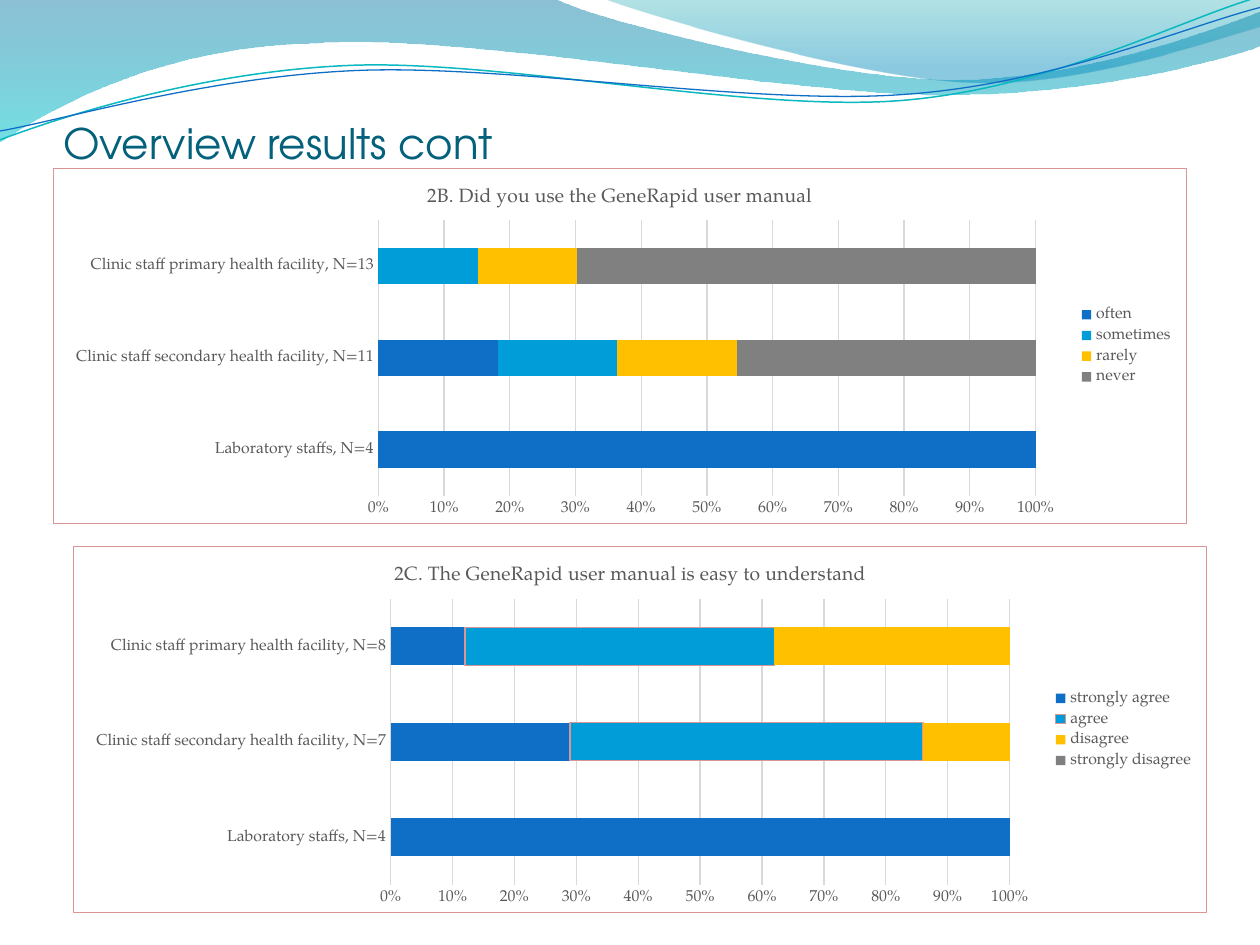
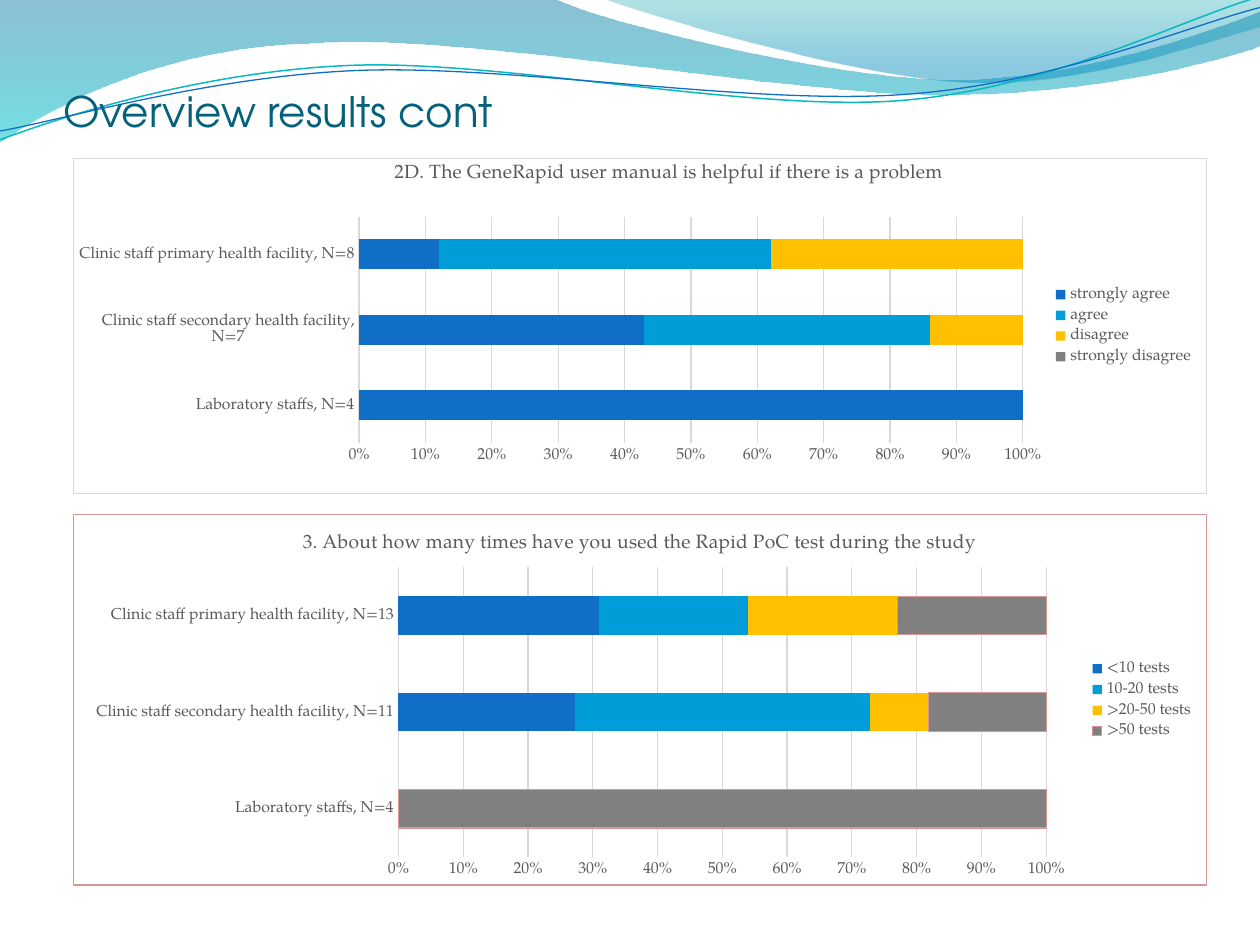
import math

import pptx
import pptx.chart.data
import pptx.dml.color
import pptx.enum.chart
import pptx.enum.text
import pptx.oxml
import pptx.oxml.ns
import pptx.util

Inches, Pt = pptx.util.Inches, pptx.util.Pt
qn = pptx.oxml.ns.qn
NS = pptx.oxml.ns.nsdecls("a", "c")

GREY, ROSE, INK = "D9D9D9", "D99694", "595959"
BARS = ["0F6FC6", "009DD9", "FFC000", "808080"]

# Each wave is a list of points (lines) and six-number Bezier curves, in inches.
BAND = [(0, 0), (4.4, -0.01), (4.76, 0.17, 6.64, 0.63, 7.58, 0.63),
        (8.53, 0.63, 9.58, 0.26, 10, 0.09), (10.01, 0.36),
        (9.83, 0.44, 8.7, 0.76, 7.46, 0.75), (6.22, 0.75, 3.82, 0.28, 2.57, 0.34),
        (1.29, 0.36, 0.46, 0.83, -0.01, 1.13)]
CREST = [(4.79, -0.01), (5.09, 0.11, 6.82, 0.62, 7.69, 0.65),
         (8.56, 0.69, 9.61, 0.32, 10, 0.21), (10, 0)]
TEAL = [(0, 1.11), (0.48, 0.93, 1.58, 0.57, 2.77, 0.52),
        (3.95, 0.47, 5.93, 0.89, 7.13, 0.8), (8.33, 0.71, 9.38, 0.15, 9.98, -0.02)]
BLUE = [(0, 1.04), (0.47, 0.96, 1.64, 0.61, 2.83, 0.56),
        (4.03, 0.51, 5.97, 0.84, 7.17, 0.75), (8.36, 0.67, 9.41, 0.21, 10, 0.06)]
TILT = 2.7

AGREE = ["strongly agree", "agree", "disagree", "strongly disagree"]
USE = ["often", "sometimes", "rarely", "never"]
TESTS = ["<10 tests", "10-20 tests", ">20-50 tests", ">50 tests"]


def rgb(code):
    return pptx.dml.color.RGBColor.from_string(code)


def spin(step, angle, cx=5, cy=0.58):
    """Turn every point of a step clockwise about (cx, cy)."""
    c, s = math.cos(math.radians(angle)), math.sin(math.radians(angle))
    turned = []
    for x, y in zip(step[::2], step[1::2]):
        turned += [cx + c * (x - cx) - s * (y - cy),
                   cy + s * (x - cx) + c * (y - cy)]
    return tuple(turned)


def bend(shape, steps):
    """Turn the straight segments of a freeform into the curves of its steps."""
    lines = list(shape.element.iter(qn("a:lnTo")))
    for line, step in zip(lines, steps[1:]):
        if len(step) == 6:
            points = "".join(
                f'<a:pt x="{Inches(x) - shape.left}" y="{Inches(y) - shape.top}"/>'
                for x, y in zip(step[::2], step[1::2]))
            line.getparent().replace(line, pptx.oxml.parse_xml(
                f"<a:cubicBezTo {NS}>{points}</a:cubicBezTo>"))


def staff(lab, second, first):
    return [f"Laboratory staffs, N={lab}",
            f"Clinic staff secondary health facility, N={second}",
            f"Clinic staff primary health facility, N={first}"]


def place(node, index, inner=False, **box):
    """Give a chart part a manual layout, in percent of the chart."""
    for old in node.findall(qn("c:layout")):
        node.remove(old)
    target = '<c:layoutTarget val="inner"/>' if inner else ""
    modes = "".join(f'<c:{k}Mode val="edge"/>' for k in box if k in "xy")
    sizes = "".join(f'<c:{k} val="{v / 100}"/>' for k, v in box.items())
    node.insert(index, pptx.oxml.parse_xml(
        f"<c:layout {NS}><c:manualLayout>{target}{modes}{sizes}"
        "</c:manualLayout></c:layout>"))


class Deck:
    head, body = "TeX Gyre Adventor", "TeX Gyre Pagella"

    def __init__(self):
        self.file = pptx.Presentation()
        self.file.slide_width, self.file.slide_height = Inches(10), Inches(7.5)
        self.slide = None

    def page(self, top, height):
        """Start a slide with its waves and its title."""
        self.slide = self.file.slides.add_slide(self.file.slide_layouts[6])
        self.area(BAND, [(0, "0074A1", 45), (100, "00C6CF", 55)])
        self.area(CREST, [(0, "00A1A9", 30), (80, "008BBF", 45)])
        self.curve(TEAL, "0AB8BF", 0.85)
        self.curve(BLUE, "0F6FC6", 0.75)
        self.title("Overview results cont", top, height)

    def wave(self, steps, close):
        ends = [(Inches(step[-2]), Inches(step[-1])) for step in steps]
        pen = self.slide.shapes.build_freeform(*ends[0])
        pen.add_line_segments(ends[1:], close=close)
        shape = pen.convert_to_shape()
        shape.shadow.inherit = False
        bend(shape, steps)
        return shape

    def area(self, steps, stops):
        """Draw a closed wave; stops give percent, colour and opacity."""
        shape = self.wave(steps, True)
        shape.line.fill.background()
        marks = "".join(
            f'<a:gs pos="{at * 1000}"><a:srgbClr val="{code}">'
            f'<a:alpha val="{alpha * 1000}"/></a:srgbClr></a:gs>'
            for at, code, alpha in stops)
        shape.element.spPr.find(qn("a:custGeom")).addnext(pptx.oxml.parse_xml(
            f"<a:gradFill {NS}><a:gsLst>{marks}</a:gsLst>"
            '<a:lin ang="5400000" scaled="0"/></a:gradFill>'))

    def curve(self, steps, color, width):
        """Draw an open wave as a level shape that is tilted back."""
        shape = self.wave([spin(step, TILT) for step in steps], False)
        shape.rotation = 360 - TILT
        shape.fill.background()
        self.rule(shape.line, color, width)

    def title(self, text, top, height):
        box = self.slide.shapes.add_textbox(
            Inches(0.5), Inches(top), Inches(9.08), Inches(height))
        frame = box.text_frame
        frame.word_wrap = True
        frame.vertical_anchor = pptx.enum.text.MSO_ANCHOR.BOTTOM
        frame.margin_left = frame.margin_right = frame.margin_bottom = 0
        frame.text = text
        self.style(frame.paragraphs[0].font, 24, "04617B", self.head)

    def style(self, font, size, color=INK, name=body):
        font.name, font.size, font.bold = name, Pt(size), False
        font.color.rgb = rgb(color)

    def chart(self, left, top, height, title, names, groups, rows,
              border=ROSE, edged=None):
        """Add a 100% bar chart; edged names the series with an outline."""
        data = pptx.chart.data.CategoryChartData()
        data.categories = groups
        for name, row in zip(names, rows):
            data.add_series(name, row)
        chart = self.slide.shapes.add_chart(
            pptx.enum.chart.XL_CHART_TYPE.BAR_STACKED_100, Inches(left),
            Inches(top), Inches(9), Inches(height), data).chart
        self.style(chart.font, 10, "000000")
        chart.element.find(qn("c:chart")).addnext(pptx.oxml.parse_xml(
            f'<c:spPr {NS}><a:solidFill><a:srgbClr val="FFFFFF"/></a:solidFill>'
            f'<a:ln w="{Pt(0.75)}"><a:solidFill><a:srgbClr val="{border}"/>'
            "</a:solidFill></a:ln></c:spPr>"))

        chart.has_title = True
        chart.chart_title.include_in_layout = False
        frame = chart.chart_title.text_frame
        frame.text = title
        self.style(frame.paragraphs[0].font, 11)

        chart.has_legend = True
        chart.legend.position = pptx.enum.chart.XL_LEGEND_POSITION.RIGHT
        chart.legend.include_in_layout = False
        self.style(chart.legend.font, 9)

        plot = chart.plots[0]
        plot.gap_width, plot.overlap, plot.vary_by_categories = 150, 100, False
        for bar, color in zip(plot.series, BARS):
            bar.format.fill.solid()
            bar.format.fill.fore_color.rgb = rgb(color)
            if bar.name == edged:
                self.rule(bar.format.line, ROSE)
        self.axes(chart)
        return chart

    def axes(self, chart):
        for axis in (chart.category_axis, chart.value_axis):
            axis.major_tick_mark = pptx.enum.chart.XL_TICK_MARK.NONE
            axis.minor_tick_mark = pptx.enum.chart.XL_TICK_MARK.NONE
            self.style(axis.tick_labels.font, 9)
        self.rule(chart.category_axis.format.line, GREY)
        value = chart.value_axis
        value.format.line.fill.background()
        value.has_major_gridlines = True
        self.rule(value.major_gridlines.format.line, GREY)
        value.tick_labels.number_format = "0%"
        value.tick_labels.number_format_is_linked = False

    def rule(self, line, color, width=0.75):
        line.color.rgb = rgb(color)
        line.width = Pt(width)


def main():
    deck = Deck()
    deck.page(0.77, 0.56)
    deck.chart(0.42, 1.33, 2.83, "2B. Did you use the GeneRapid user manual",
               USE, staff(4, 11, 13),
               [(100, 18, 0), (0, 18, 15), (0, 18, 15), (0, 45, 69)])
    easy = deck.chart(
        0.58, 4.33, 2.92, "2C. The GeneRapid user manual is easy to understand",
        AGREE, staff(4, 7, 8),
        [(100, 29, 12), (0, 57, 50), (0, 14, 38), (0, 0, 0)], edged="agree")
    place(easy.chart_title.element, 1, x=28, y=3.8)

    deck.page(0.58, 0.5)
    helpful = deck.chart(
        0.58, 1.25, 2.67,
        "2D. The GeneRapid user manual is helpful if there is a problem",
        AGREE, staff(4, 7, 8),
        [(100, 43, 12), (0, 43, 50), (0, 14, 38), (0, 0, 0)], border=GREY)
    place(helpful.chart_title.element, 1, x=28, y=0)
    place(helpful.element.find(".//" + qn("c:plotArea")), 0, inner=True,
          x=25.2, y=17.5, w=58.6, h=67.5)
    deck.chart(0.58, 4.08, 2.95,
               "3. About how many times have you used the Rapid PoC test during the study",
               TESTS, staff(4, 11, 13),
               [(0, 27, 31), (0, 45, 23), (0, 9, 23), (100, 18, 23)],
               edged=">50 tests")
    deck.file.save("out.pptx")


if __name__ == "__main__":
    main()
